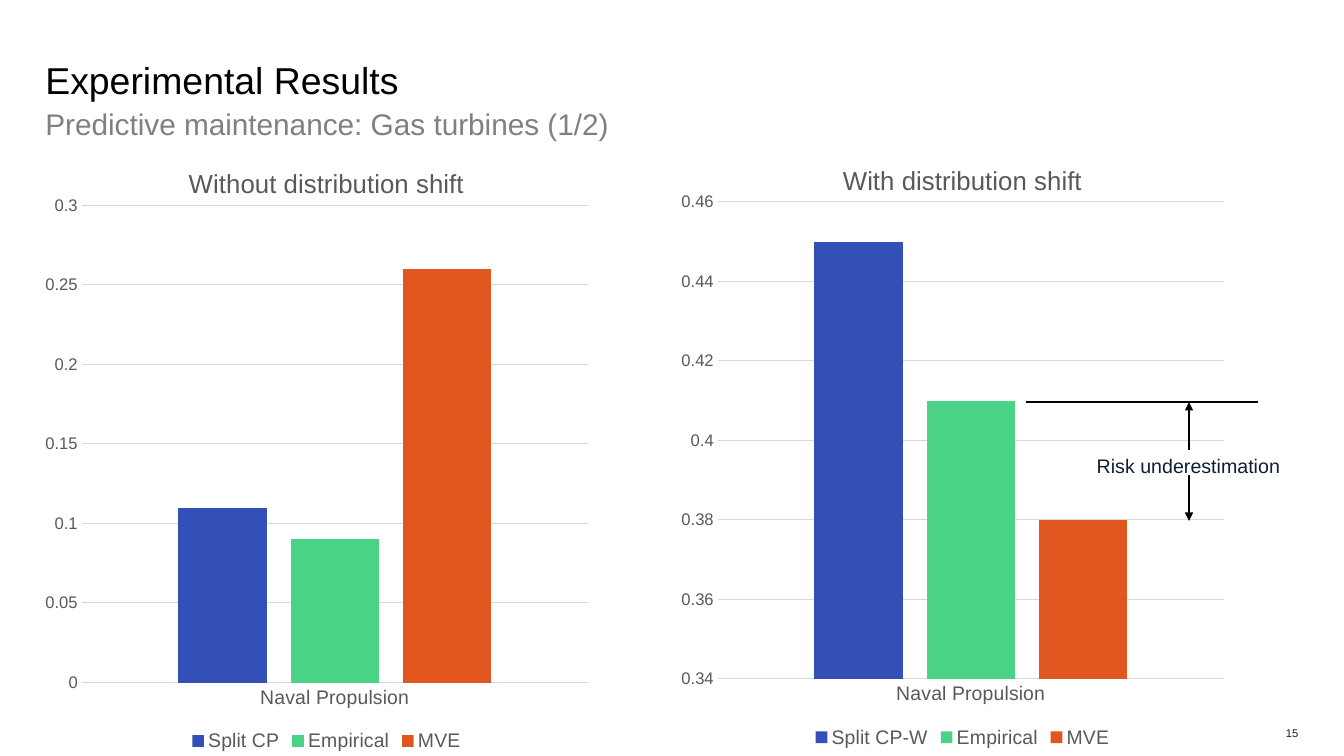
from lxml import etree
from pptx import Presentation
from pptx.chart.data import CategoryChartData
from pptx.dml.color import RGBColor
from pptx.enum import chart as kinds, shapes, text
from pptx.oxml import parse_xml
from pptx.oxml.ns import nsdecls, qn
from pptx.util import Pt

COLORS = {"ink": "000000", "navy": "0F1E32", "gray": "808080", "label": "595959",
          "grid": "D9D9D9", "blue": "3350B8", "green": "4AD386", "orange": "E1551E"}


class Deck:
    face = "Arial"

    def __init__(self, wide, high):
        self.prs = Presentation()
        self.prs.slide_width, self.prs.slide_height = Pt(wide), Pt(high)
        self.slide = self.prs.slides.add_slide(self.prs.slide_layouts[6])

    def color(self, name):
        return RGBColor.from_string(COLORS[name])

    def style(self, font, size, name):
        font.name, font.size, font.bold = self.face, Pt(size), False
        font.color.rgb = self.color(name)

    def text(self, box, lines, wrap=True, align=text.PP_ALIGN.LEFT,
             anchor=text.MSO_ANCHOR.TOP, space=1.0):
        frame = self.slide.shapes.add_textbox(*map(Pt, box)).text_frame
        frame.margin_left = frame.margin_right = 0
        frame.margin_top = frame.margin_bottom = 0
        frame.word_wrap, frame.vertical_anchor = wrap, anchor
        for i, (words, size, name) in enumerate(lines):
            para = frame.add_paragraph() if i else frame.paragraphs[0]
            para.text, para.alignment, para.line_spacing = words, align, space
            self.style(para.font, size, name)

    def line(self, start, end, arrow=False):
        link = self.slide.shapes.add_connector(
            shapes.MSO_CONNECTOR.STRAIGHT, *map(Pt, start + end))
        link.line.width = Pt(1.5)
        link.line.color.rgb = self.color("ink")
        if arrow:
            etree.SubElement(link.line._get_or_add_ln(), qn("a:tailEnd"), type="triangle")
        etree.SubElement(link._element.spPr, qn("a:effectLst"))

    def chart(self, box, title, bars, low, high, step):
        data = CategoryChartData()
        data.categories = ["Naval Propulsion"]
        for name, value, _ in bars:
            data.add_series(name, [value])
        chart = self.slide.shapes.add_chart(
            kinds.XL_CHART_TYPE.COLUMN_CLUSTERED, *map(Pt, box), data).chart
        self.style(chart.font, 10, "ink")

        # Title and legend
        chart.has_title = True
        para = chart.chart_title.text_frame.paragraphs[0]
        para.text = title
        self.style(para.font, 18.6, "label")
        chart.has_legend = True
        chart.legend.position = kinds.XL_LEGEND_POSITION.BOTTOM
        chart.legend.include_in_layout = False
        self.style(chart.legend.font, 14, "label")

        # Bars
        plot = chart.plots[0]
        plot.gap_width, plot.overlap, plot.vary_by_categories = 219, -27, False
        for series, (_, _, name) in zip(plot.series, bars):
            series.format.fill.solid()
            series.format.fill.fore_color.rgb = self.color(name)

        # Axes
        cat, val = chart.category_axis, chart.value_axis
        for axis, size in ((cat, 14), (val, 12)):
            axis.major_tick_mark = axis.minor_tick_mark = kinds.XL_TICK_MARK.NONE
            self.style(axis.tick_labels.font, size, "label")
        val.minimum_scale, val.maximum_scale, val.major_unit = low, high, step
        val.tick_labels.number_format = "General"
        val.tick_labels.number_format_is_linked = False
        val.format.line.fill.background()
        for form in (cat.format, val.major_gridlines.format):
            form.line.width = Pt(0.75)
            form.line.color.rgb = self.color("grid")

        # Plot area within the chart
        area = chart._chartSpace.chart.plotArea
        for old in area.findall(qn("c:layout")):
            area.remove(old)
        spots = "".join(f'<c:{tag} val="{value}"/>' for tag, value in (
            ("layoutTarget", "inner"), ("xMode", "edge"), ("yMode", "edge"),
            ("x", 0.055), ("y", 0.1), ("w", 0.92), ("h", 0.78)))
        area.insert(0, parse_xml(f'<c:layout {nsdecls("c")}><c:manualLayout>'
                                 f'{spots}</c:manualLayout></c:layout>'))


def main():
    deck = Deck(960, 540)

    # Heading and page number
    deck.text((32.4, 37.4, 710.6, 64), [
        ("Experimental Results", 26.7, "ink"),
        ("Predictive maintenance: Gas turbines (1/2)", 21.3, "gray")], space=1.1)
    deck.text((890, 514, 37.4, 18.7), [("15", 8, "navy")],
              align=text.PP_ALIGN.RIGHT, anchor=text.MSO_ANCHOR.MIDDLE)

    # Charts
    hues = ("blue", "green", "orange")
    for left, top, title, first, values, scale in (
            (32.4, 103, "Without distribution shift", "Split CP",
             (0.11, 0.09, 0.26), (0, 0.3, 0.05)),
            (486.7, 100.5, "With distribution shift", "Split CP-W",
             (0.45, 0.41, 0.38), (0.34, 0.46, 0.02))):
        bars = list(zip((first, "Empirical", "MVE"), values, hues))
        deck.chart((left, top, 397.4, 437), title, bars, *scale)

    # Risk gap
    mid, high = 849.3, 287.2
    deck.line((733, high), (898.6, high))
    deck.line((mid, 321.6), (mid, high), arrow=True)
    deck.line((mid, 339.6), (mid, 372), arrow=True)
    deck.text((783.4, 322.6, 131.8, 17.3), [("Risk underestimation", 14, "navy")],
              wrap=False, space=1.1)

    deck.prs.save("out.pptx")


if __name__ == "__main__":
    main()
